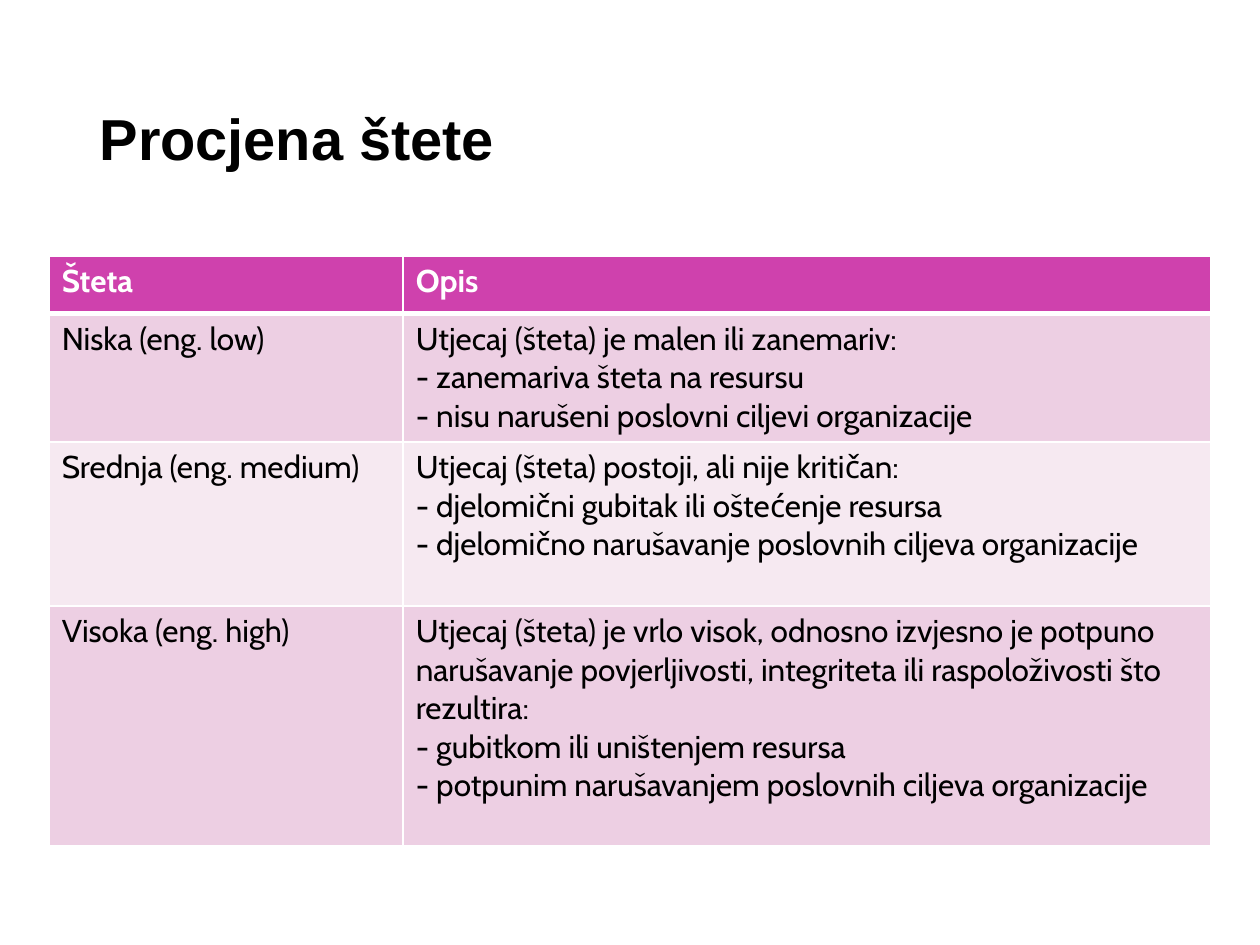
from lxml import etree
from pptx import Presentation
from pptx.dml.color import RGBColor
from pptx.enum.text import MSO_ANCHOR, PP_ALIGN
from pptx.oxml.ns import qn
from pptx.util import Inches, Pt

MIDDLE, TOP = MSO_ANCHOR.MIDDLE, MSO_ANCHOR.TOP
LEFT = PP_ALIGN.LEFT

BLACK = RGBColor(0x00, 0x00, 0x00)
WHITE = RGBColor(0xFF, 0xFF, 0xFF)
MAGENTA = RGBColor(0xCF, 0x41, 0xAD)
PINK = RGBColor(0xED, 0xCF, 0xE3)
PALE_PINK = RGBColor(0xF6, 0xE9, 0xF1)

TITLE_ONLY = 5
COLUMN_WIDTHS = (2.81, 6.41)
ROW_HEIGHTS = (0.46, 1.02, 1.3, 1.9)
DAMAGE_ROWS = (
    ("Šteta", "Opis"),
    ("Niska (eng. low)",
     "Utjecaj (šteta) je malen ili zanemariv:\n"
     "- zanemariva šteta na resursu\n"
     "- nisu narušeni poslovni ciljevi organizacije"),
    ("Srednja (eng. medium)",
     "Utjecaj (šteta) postoji, ali nije kritičan:\n"
     "- djelomični gubitak ili oštećenje resursa\n"
     "- djelomično narušavanje poslovnih ciljeva organizacije"),
    ("Visoka (eng. high)",
     "Utjecaj (šteta) je vrlo visok, odnosno izvjesno je potpuno narušavanje "
     "povjerljivosti, integriteta ili raspoloživosti što rezultira:\n"
     "- gubitkom ili uništenjem resursa\n"
     "- potpunim narušavanjem poslovnih ciljeva organizacije"),
)


def write_text(text_frame, text, font="Cabin", size=18, color=BLACK,
               bold=False, line_spacing=1.0):
    """Write one paragraph for each line of the text."""
    text_frame.word_wrap = True
    text_frame.text = text
    for paragraph in text_frame.paragraphs:
        paragraph.alignment = LEFT
        paragraph.line_spacing = line_spacing
        for run in paragraph.runs:
            run.font.name = font
            run.font.size = Pt(size)
            run.font.color.rgb = color
            run.font.bold = bold


def set_borders(cell, top=1, bottom=1):
    """Draw white borders, with widths in points."""
    properties = cell._tc.get_or_add_tcPr()
    for side, width in (("L", 1), ("R", 1), ("T", top), ("B", bottom)):
        line = etree.SubElement(properties, qn(f"a:ln{side}"), w=str(Pt(width)))
        fill = etree.SubElement(line, qn("a:solidFill"))
        etree.SubElement(fill, qn("a:srgbClr"), val=str(WHITE))


def add_title(slide, left, top, width, height):
    title = slide.shapes.title
    title.left, title.top, title.width, title.height = left, top, width, height
    title.text_frame.vertical_anchor = MIDDLE
    write_text(title.text_frame, "Procjena štete", font="Arial", size=33,
               bold=True, line_spacing=0.9)


def add_damage_table(slide, left, top, width, height):
    table = slide.shapes.add_table(len(DAMAGE_ROWS), len(COLUMN_WIDTHS),
                                   left, top, width, height).table
    for column, share in zip(table.columns, COLUMN_WIDTHS):
        column.width = int(width * share / sum(COLUMN_WIDTHS))
    for row, share in zip(table.rows, ROW_HEIGHTS):
        row.height = int(height * share / sum(ROW_HEIGHTS))

    for row_index, texts in enumerate(DAMAGE_ROWS):
        header = row_index == 0
        band = PINK if row_index % 2 else PALE_PINK
        for column_index, text in enumerate(texts):
            cell = table.cell(row_index, column_index)
            cell.vertical_anchor = TOP
            cell.margin_left = cell.margin_right = Inches(0.1)
            cell.margin_top = cell.margin_bottom = Inches(0.05)
            set_borders(cell, top=3 if row_index == 1 else 1,
                        bottom=3 if header else 1)
            cell.fill.solid()
            cell.fill.fore_color.rgb = MAGENTA if header else band
            write_text(cell.text_frame, text, bold=header,
                       color=WHITE if header else BLACK)


def main():
    presentation = Presentation()
    presentation.slide_width = Inches(10)
    presentation.slide_height = Inches(7.5)
    slide = presentation.slides.add_slide(presentation.slide_layouts[TITLE_ONLY])
    slide.background.fill.solid()
    slide.background.fill.fore_color.rgb = WHITE

    add_title(slide, Inches(0.69), Inches(0.4), Inches(8.62), Inches(1.45))
    add_damage_table(slide, Inches(0.39), Inches(2.03),
                     Inches(sum(COLUMN_WIDTHS)), Inches(sum(ROW_HEIGHTS)))
    presentation.save("out.pptx")


if __name__ == "__main__":
    main()
